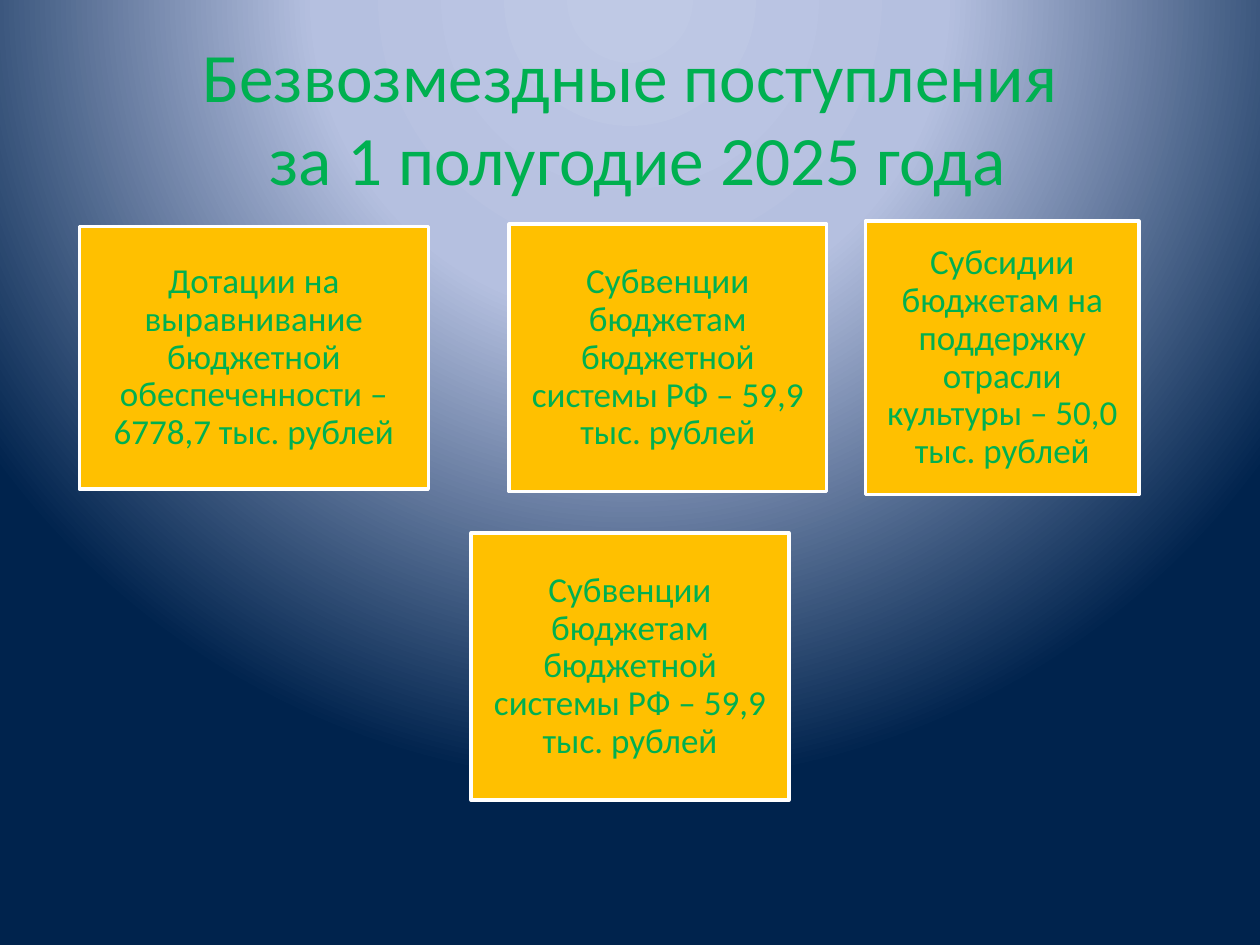
from lxml import etree
from pptx import Presentation
from pptx.dml.color import RGBColor
from pptx.enum.shapes import MSO_SHAPE
from pptx.enum.text import MSO_ANCHOR, PP_ALIGN
from pptx.oxml.ns import qn
from pptx.util import Inches, Pt

RECT = MSO_SHAPE.RECTANGLE
MIDDLE = MSO_ANCHOR.MIDDLE
CENTER = PP_ALIGN.CENTER

GREEN = RGBColor(0x00, 0xB0, 0x50)
AMBER = RGBColor(0xFF, 0xC0, 0x00)
WHITE = RGBColor(0xFF, 0xFF, 0xFF)
PALE = RGBColor(0xBF, 0xC9, 0xE5)
SKY = RGBColor(0xB5, 0xC0, 0xE0)
NAVY = RGBColor(0x00, 0x23, 0x4D)

TITLE = "Безвозмездные поступления\v за 1 полугодие 2025 года"
GRANT = "Дотации на выравнивание бюджетной обеспеченности – 6778,7 тыс. рублей"
SUBVENTION = "Субвенции бюджетам бюджетной системы РФ – 59,9 тыс. рублей"
SUBSIDY = "Субсидии бюджетам на поддержку отрасли культуры – 50,0 тыс. рублей"

# Middle lines of the two rows, in percent of the slide's height
TOP_ROW, LOW_ROW = 37.87, 70.53
# Text, left, middle line, width, height, in percent of the slide's size
CARDS = [
    (GRANT, 6.3, TOP_ROW, 27.7, 27.8),
    (SUBVENTION, 40.4, TOP_ROW, 25.2, 28.3),
    (SUBSIDY, 68.7, TOP_ROW, 21.7, 28.93),
    (SUBVENTION, 37.4, LOW_ROW, 25.2, 28.3),
]


class Deck:
    """Holds the text style and the current slide; lengths are percents."""

    font = "Calibri"
    color = GREEN

    def __init__(self):
        self.prs = Presentation()
        self.prs.slide_width = Inches(10)
        self.prs.slide_height = Inches(7.5)
        self.slide = self.prs.slides.add_slide(self.prs.slide_layouts[6])

    def area(self, left, top, width, height):
        wide, high = self.prs.slide_width, self.prs.slide_height
        return [int(share * size / 100) for share, size in
                ((left, wide), (top, high), (width, wide), (height, high))]

    def glow(self, stops):
        """Fill the background with a round gradient from above the slide."""
        self.slide.background.fill.gradient()
        grad = self.slide.element.find(".//" + qn("a:gradFill"))
        grad.clear()
        row = etree.SubElement(grad, qn("a:gsLst"))
        for share, color in stops:
            stop = etree.SubElement(row, qn("a:gs"), pos=str(share * 1000))
            etree.SubElement(stop, qn("a:srgbClr"), val=str(color))
        shade = etree.SubElement(grad, qn("a:path"), path="circle")
        etree.SubElement(shade, qn("a:fillToRect"),
                         l="50000", t="-80000", r="50000", b="180000")

    def label(self, shape, text, size):
        frame = shape.text_frame
        frame.word_wrap = True
        frame.vertical_anchor = MIDDLE
        frame.text = text
        para = frame.paragraphs[0]
        para.alignment = CENTER
        for run in para.runs:
            run.font.name = self.font
            run.font.size = Pt(size)
            run.font.color.rgb = self.color
        return frame, para

    def title(self, text, *area):
        box = self.slide.shapes.add_textbox(*self.area(*area))
        self.label(box, text, 39.6)

    def card(self, text, left, middle, width, height):
        area = self.area(left, middle - height / 2, width, height)
        shape = self.slide.shapes.add_shape(RECT, *area)
        shape.shadow.inherit = False
        shape.fill.solid()
        shape.fill.fore_color.rgb = AMBER
        shape.line.color.rgb = WHITE
        shape.line.width = Pt(2)
        frame, para = self.label(shape, text, 20)
        frame.margin_left = frame.margin_right = Inches(0.08)
        frame.margin_top = frame.margin_bottom = Inches(0.08)
        para.line_spacing = 0.9
        para.space_after = Pt(7)


def main():
    deck = Deck()
    deck.glow([(0, PALE), (40, SKY), (100, NAVY)])
    deck.title(TITLE, 5, 4, 90, 16.67)
    for card in CARDS:
        deck.card(*card)
    deck.prs.save("out.pptx")


if __name__ == "__main__":
    main()
